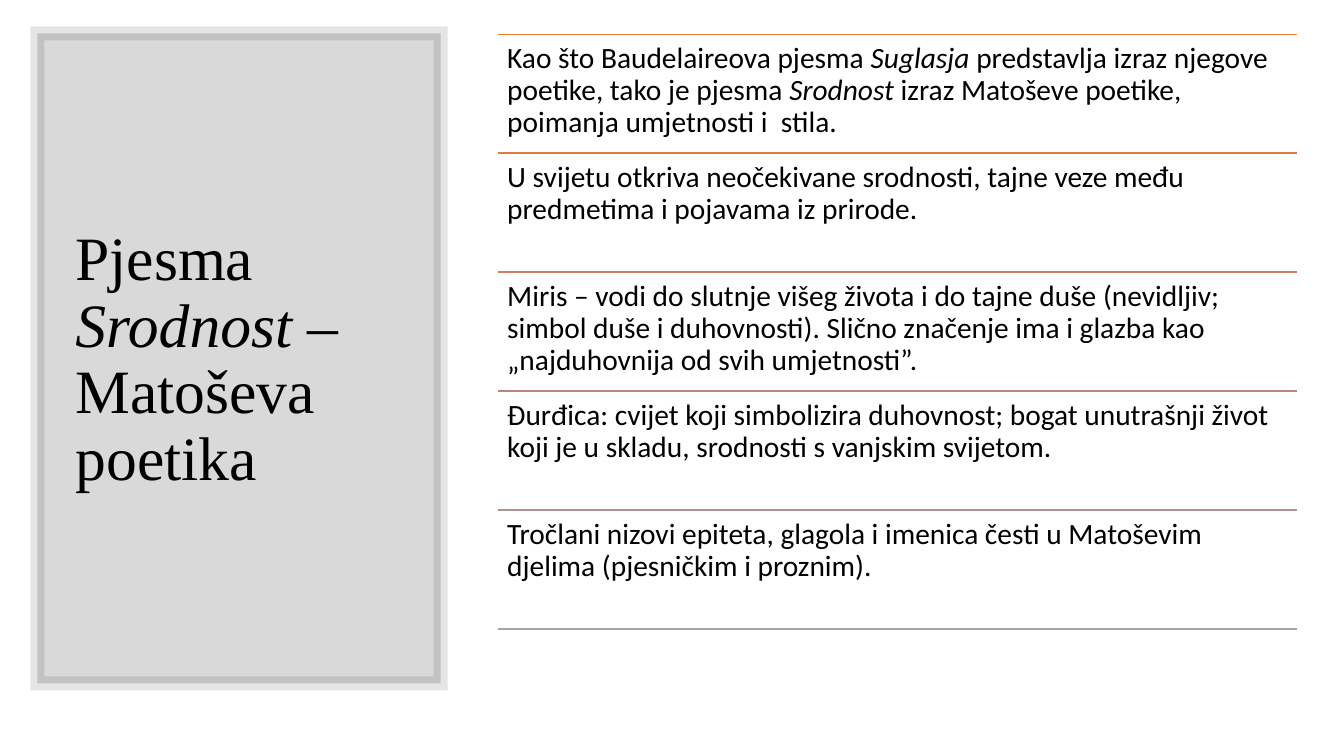
from pptx import Presentation
from pptx.dml.color import RGBColor
from pptx.enum.shapes import MSO_CONNECTOR, MSO_SHAPE
from pptx.enum.text import MSO_ANCHOR
from pptx.oxml.ns import qn
from pptx.util import Inches, Pt
from lxml.etree import SubElement

BLACK = RGBColor(0x00, 0x00, 0x00)
RULE_COLORS = [
    RGBColor(0xED, 0x7D, 0x31),
    RGBColor(0xDC, 0x7A, 0x4B),
    RGBColor(0xCC, 0x7D, 0x64),
    RGBColor(0xBD, 0x86, 0x7B),
    RGBColor(0xB0, 0x93, 0x91),
    RGBColor(0xA5, 0xA5, 0xA5),
]

# Each text is a list of (words, italic) runs
TITLE = [("Pjesma ", False), ("Srodnost", True), (" – Matoševa poetika", False)]
POINTS = [
    [("Kao što Baudelaireova pjesma ", False), ("Suglasja", True),
     (" predstavlja izraz njegove poetike, tako je pjesma ", False),
     ("Srodnost", True),
     (" izraz Matoševe poetike, poimanja umjetnosti i  stila.", False)],
    [("U svijetu otkriva neočekivane srodnosti, tajne veze među "
      "predmetima i pojavama iz prirode.", False)],
    [("Miris – vodi do slutnje višeg života i do tajne duše (nevidljiv; "
      "simbol duše i duhovnosti). Slično značenje ima i glazba kao "
      "„najduhovnija od svih umjetnosti”.", False)],
    [("Đurđica: cvijet koji simbolizira duhovnost; bogat unutrašnji život "
      "koji je u skladu, srodnosti s vanjskim svijetom.", False)],
    [("Tročlani nizovi epiteta, glagola i imenica česti u Matoševim "
      "djelima (pjesničkim i proznim).", False)],
]

LIST_LEFT, LIST_TOP, LIST_WIDTH, ROW_HEIGHT = 4.94, 0.34, 7.92, 1.18


class SlideBuilder:
    title_font = "Times New Roman"
    body_font = "Calibri"

    def __init__(self, slide):
        self.slide = slide

    def panel(self, left, top, width, height, fill_alpha, line_alpha):
        sp = self.slide.shapes.add_shape(
            MSO_SHAPE.RECTANGLE, Inches(left), Inches(top),
            Inches(width), Inches(height))
        sp.shadow.inherit = False
        sp.fill.solid()
        sp.fill.fore_color.rgb = BLACK
        sp.line.color.rgb = BLACK
        sp.line.width = Pt(10)
        SubElement(sp.line._get_or_add_ln(), qn("a:miter"), lim="800000")
        # Fill colour comes first, then line colour
        colors = sp._element.spPr.iter(qn("a:srgbClr"))
        for color, percent in zip(list(colors), (fill_alpha, line_alpha)):
            SubElement(color, qn("a:alpha"), val=str(percent * 1000))

    def text(self, left, top, width, height, runs, font, size,
             anchor=MSO_ANCHOR.TOP, inset_x=0.1, inset_y=0.05):
        box = self.slide.shapes.add_textbox(
            Inches(left), Inches(top), Inches(width), Inches(height))
        tf = box.text_frame
        tf.word_wrap = True
        tf.vertical_anchor = anchor
        tf.margin_left = tf.margin_right = Inches(inset_x)
        tf.margin_top = tf.margin_bottom = Inches(inset_y)
        p = tf.paragraphs[0]
        p.line_spacing = 0.9
        p.font.name = font
        p.font.size = Pt(size)
        p.font.color.rgb = BLACK
        for words, italic in runs:
            r = p.add_run()
            r.text = words
            if italic:
                r.font.italic = True

    def rule(self, left, top, width, color):
        line = self.slide.shapes.add_connector(
            MSO_CONNECTOR.STRAIGHT, Inches(left), Inches(top),
            Inches(left + width), Inches(top))
        line.line.color.rgb = color
        line.line.width = Pt(1)
        SubElement(line._element.spPr, qn("a:effectLst"))


def main():
    prs = Presentation()
    prs.slide_width = Inches(13.33)
    prs.slide_height = Inches(7.5)
    s = SlideBuilder(prs.slides.add_slide(prs.slide_layouts[6]))

    # Title panel
    s.panel(0.37, 0.33, 4, 6.45, fill_alpha=15, line_alpha=10)
    s.text(0.65, 0.7, 3.46, 5.75, TITLE, s.title_font, 44, MSO_ANCHOR.MIDDLE)

    # Points between coloured rules
    for i, color in enumerate(RULE_COLORS):
        s.rule(LIST_LEFT, LIST_TOP + i * ROW_HEIGHT, LIST_WIDTH, color)
    for i, point in enumerate(POINTS):
        s.text(LIST_LEFT, LIST_TOP + i * ROW_HEIGHT, LIST_WIDTH, ROW_HEIGHT,
               point, s.body_font, 21, inset_x=0.09, inset_y=0.09)

    prs.save("out.pptx")


if __name__ == "__main__":
    main()
